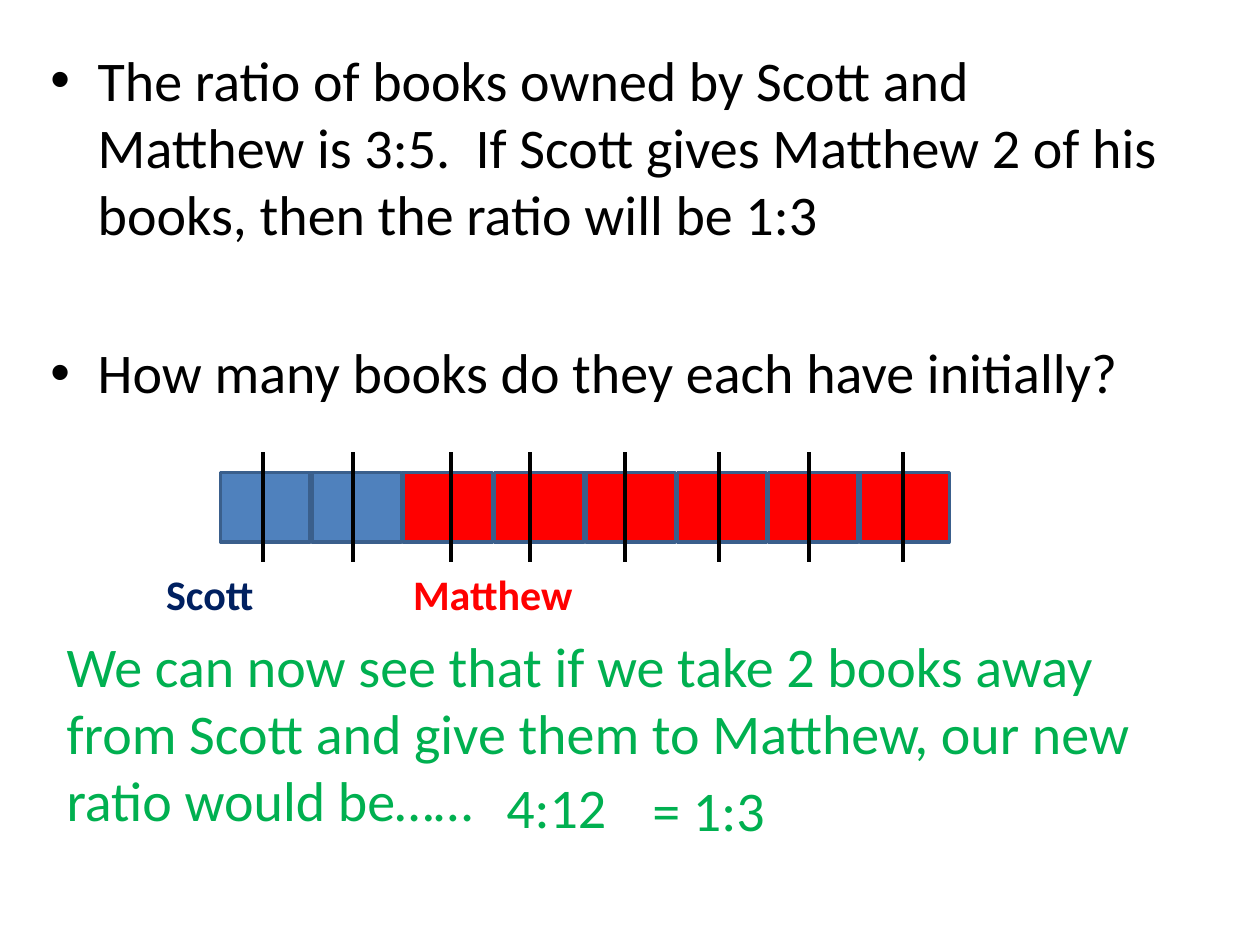
from typing import NamedTuple

from lxml.etree import SubElement
from pptx import Presentation
from pptx.dml.color import RGBColor
from pptx.enum.shapes import MSO_CONNECTOR, MSO_SHAPE
from pptx.enum.text import MSO_AUTO_SIZE
from pptx.oxml.ns import qn
from pptx.util import Inches, Pt

COLOURS = {"scott": "4F81BD", "matthew": "FF0000", "outline": "3A5F8C", "divider": "000000",
           "scott_label": "002060", "answer": "00B050", "question": "000000"}
SLIDE_WIDTH, SLIDE_HEIGHT = Inches(10), Inches(7.5)
COLUMN, ROW = SLIDE_WIDTH / 100, SLIDE_HEIGHT / 75
FIRST_UNIT, UNIT_PITCH = 17.5, 7.25
UNIT_OWNERS = ["scott"] * 2 + ["matthew"] * 6
DIVIDER_COLUMNS = [20.9, 28, 35.8, 42.1, 49.6, 57.1, 64.2, 71.7]


class Area(NamedTuple):
    """A rectangle in columns and rows of the slide grid."""
    left: float
    top: float
    width: float
    height: float

    def emu(self) -> tuple[int, ...]:
        steps = (COLUMN, ROW, COLUMN, ROW)
        return tuple(round(length * step) for length, step in zip(self, steps))


class Caption(NamedTuple):
    """A piece of text with its place and look."""
    wording: str
    area: Area
    colour: str
    size: int = 32
    bold: bool = False


QUESTION = {
    "The ratio of books owned by Scott and Matthew is 3:5.  "
    "If Scott gives Matthew 2 of his books, then the ratio will be 1:3": None,
    "How many books do they each have initially?": Pt(52),
}
CAPTIONS = [
    Caption("Scott", Area(12.2, 44.6, 17.3, 5), "scott_label", 24, True),
    Caption("Matthew", Area(31.8, 44.6, 17.3, 5), "matthew", 24, True),
    Caption("We can now see that if we take 2 books away from Scott and give them to Matthew, "
            "our new ratio would be……", Area(4.3, 49.6, 91.3, 17.2), "answer"),
    Caption("4:12", Area(39.2, 60.8, 24.4, 6.4), "answer"),
    Caption("= 1:3", Area(50.8, 61.1, 23.7, 6.4), "answer"),
]


def colour(key: str) -> RGBColor:
    """Look up a palette colour."""
    return RGBColor.from_string(COLOURS[key])


def set_font(font, key: str, size: int, bold: bool = False) -> None:
    """Apply typeface, size, weight and colour."""
    for attribute, value in {"name": "Calibri", "size": Pt(size), "bold": bold}.items():
        setattr(font, attribute, value)
    font.color.rgb = colour(key)


def write_question(slide) -> None:
    """Fill the body placeholder with the bulleted problem."""
    body = slide.placeholders[1]
    body.left, body.top, body.width, body.height = Area(3, 3.1, 90, 27.8).emu()
    body.text_frame.text = "\n".join(QUESTION)
    for paragraph, gap in zip(body.text_frame.paragraphs, QUESTION.values()):
        if gap:
            paragraph.space_before = gap
        set_font(paragraph.runs[0].font, "question", 32)


def draw_unit(slide, area: Area, owner: str) -> None:
    """Draw one unit of the ratio bar."""
    unit = slide.shapes.add_shape(MSO_SHAPE.RECTANGLE, *area.emu())
    unit.shadow.inherit = False
    unit.fill.solid()
    unit.fill.fore_color.rgb = colour(owner)
    unit.line.color.rgb = colour("outline")
    unit.line.width = Pt(2)


def draw_divider(slide, column: float) -> None:
    """Draw the upright line that halves a unit."""
    left, top, _, height = Area(column, 35.9, 0, 8.7).emu()
    divider = slide.shapes.add_connector(MSO_CONNECTOR.STRAIGHT, left, top, left, top + height)
    divider.line.color.rgb = colour("divider")
    divider.line.width = Pt(2.25)
    SubElement(divider._element.spPr, qn("a:effectLst"))


def write_caption(slide, caption: Caption) -> None:
    """Add a wrapping text box."""
    frame = slide.shapes.add_textbox(*caption.area.emu()).text_frame
    for attribute, value in {"word_wrap": True, "auto_size": MSO_AUTO_SIZE.SHAPE_TO_FIT_TEXT,
                             "text": caption.wording}.items():
        setattr(frame, attribute, value)
    set_font(frame.paragraphs[0].runs[0].font, caption.colour, caption.size, caption.bold)


def main() -> None:
    """Build the slide on ratios and save it."""
    deck = Presentation()
    deck.slide_width, deck.slide_height = SLIDE_WIDTH, SLIDE_HEIGHT
    slide = deck.slides.add_slide(deck.slide_layouts[1])
    title = slide.shapes.title._element
    title.getparent().remove(title)
    write_question(slide)
    for position, owner in enumerate(UNIT_OWNERS):
        draw_unit(slide, Area(FIRST_UNIT + position * UNIT_PITCH, 37.5, 7.1, 5.5), owner)
    for column in DIVIDER_COLUMNS:
        draw_divider(slide, column)
    for caption in CAPTIONS:
        write_caption(slide, caption)
    deck.save("out.pptx")


if __name__ == "__main__":
    main()
